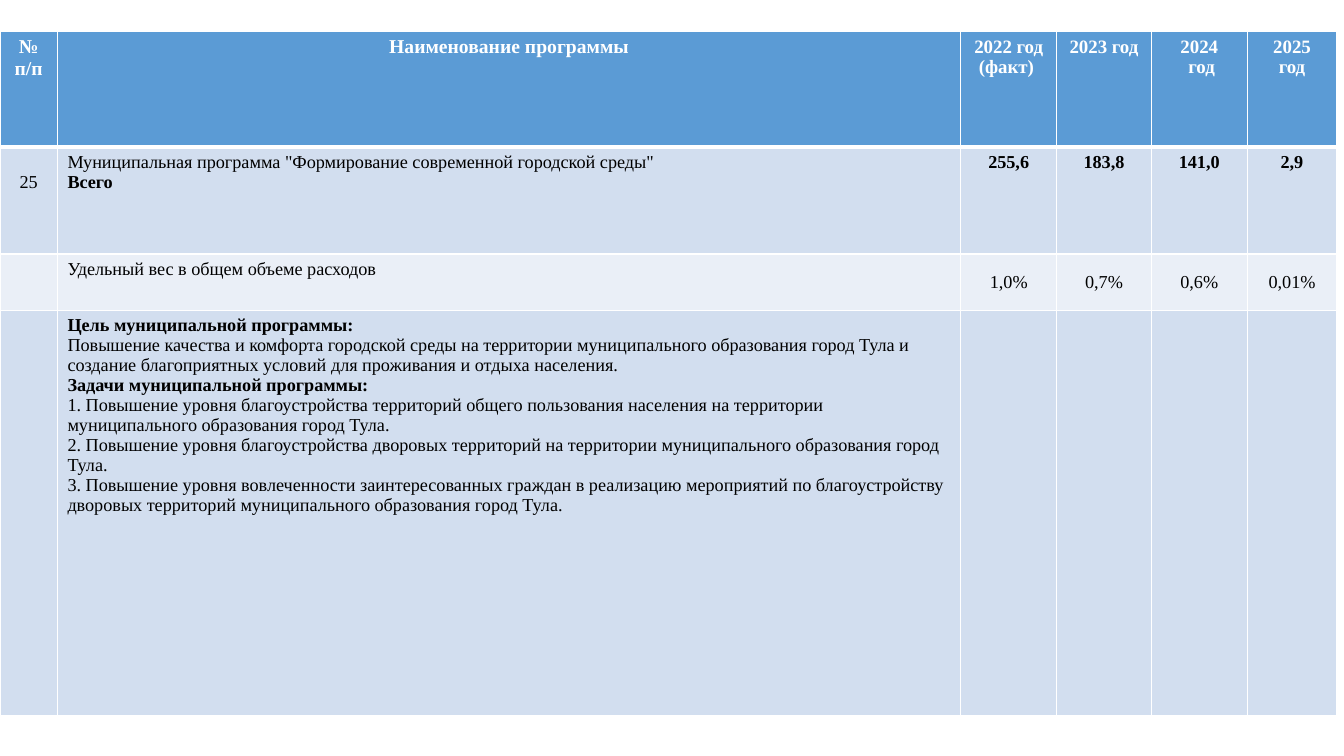
"""Build a slide with the budget table of a municipal programme."""
from lxml.etree import SubElement
from pptx import Presentation
from pptx.dml.color import RGBColor
from pptx.enum.text import MSO_ANCHOR as ANCHOR, PP_ALIGN as ALIGN
from pptx.oxml.ns import qn
from pptx.util import Inches, Pt

WHITE = RGBColor(0xFF, 0xFF, 0xFF)
BLACK = RGBColor(0, 0, 0)
BLUE = RGBColor(0x5B, 0x9B, 0xD5)
BAND_DARK = RGBColor(0xD2, 0xDE, 0xEF)
BAND_LIGHT = RGBColor(0xEA, 0xEF, 0xF7)

COL_WIDTHS = [0.57, 8.96, 0.95, 0.94, 0.95, 0.89]
ROW_HEIGHTS = [1.15, 1.06, 0.56, 4.02]
ROW_FILLS = [BLUE, BAND_DARK, BAND_LIGHT, BAND_DARK]

HEADERS = ["№ п/п", "Наименование программы", "2022 год (факт) ", "2023 год",
           "2024\n год", "2025\nгод"]
TOTALS = ["255,6", "183,8", "141,0", "2,9"]
SHARES = ["1,0%", "0,7%", "0,6%", "0,01%"]
PROGRAMME = """Муниципальная программа "Формирование современной городской среды"
Всего"""
GOALS = """Цель муниципальной программы:
Повышение качества и комфорта городской среды на территории муниципального образования город Тула и создание благоприятных условий для проживания и отдыха населения.
Задачи муниципальной программы:
1. Повышение уровня благоустройства территорий общего пользования населения на территории муниципального образования город Тула.
2. Повышение уровня благоустройства дворовых территорий на территории муниципального образования город Тула.
3. Повышение уровня вовлеченности заинтересованных граждан в реализацию мероприятий по благоустройству дворовых территорий муниципального образования город Тула."""


def write(cell, text, size=13, color=BLACK, align=ALIGN.CENTER,
          anchor=ANCHOR.TOP, bold_lines=()):
    """Write each line of text as a paragraph, with the listed lines in bold."""
    cell.vertical_anchor = anchor
    tf = cell.text_frame
    for i, line in enumerate(text.split("\n")):
        p = tf.add_paragraph() if i else tf.paragraphs[0]
        p.alignment = align
        r = p.add_run()
        r.text = line
        r.font.name = "Times New Roman"
        r.font.size = Pt(size)
        r.font.bold = i in bold_lines
        r.font.color.rgb = color


def add_borders(cell, **widths):
    """Draw white borders on the named sides, with widths in points."""
    tc_pr = cell._tc.get_or_add_tcPr()
    for side, width in widths.items():
        ln = SubElement(tc_pr, qn(f"a:ln{side}"), w=str(Pt(width)))
        fill = SubElement(ln, qn("a:solidFill"))
        SubElement(fill, qn("a:srgbClr"), val=str(WHITE))


def add_grid(s):
    """Add the empty table with its sizes, fills and borders."""
    shape = s.shapes.add_table(len(ROW_HEIGHTS), len(COL_WIDTHS), 0, Inches(0.31),
                               Inches(sum(COL_WIDTHS)), Inches(sum(ROW_HEIGHTS)))
    table = shape.table
    for column, width in zip(table.columns, COL_WIDTHS):
        column.width = Inches(width)
    for i, row in enumerate(table.rows):
        row.height = Inches(ROW_HEIGHTS[i])
        for cell in row.cells:
            if i == 0:
                add_borders(cell, L=1, R=1, T=1, B=3)
            else:
                add_borders(cell, L=1, R=1, B=1)
            cell.fill.solid()
            cell.fill.fore_color.rgb = ROW_FILLS[i]
    return table


def fill_table(table):
    """Write the headers, the figures and the programme's goals."""
    for col, header in enumerate(HEADERS):
        write(table.cell(0, col), header, size=14 if col < 2 else 13.5,
              color=WHITE, bold_lines=(0, 1))
    number = table.cell(1, 0)
    number.margin_top = Inches(0.25)
    write(number, "25")
    write(table.cell(1, 1), PROGRAMME, align=ALIGN.LEFT, bold_lines=(1,))
    write(table.cell(2, 1), "Удельный вес в общем объеме расходов", align=ALIGN.LEFT)
    write(table.cell(3, 1), GOALS, align=ALIGN.LEFT, bold_lines=(0, 2))
    for col, (total, share) in enumerate(zip(TOTALS, SHARES), start=2):
        write(table.cell(1, col), total, bold_lines=(0,))
        write(table.cell(2, col), share, anchor=ANCHOR.MIDDLE)


def main():
    """Build and save the slide."""
    prs = Presentation()
    prs.slide_width = Inches(13.33)
    prs.slide_height = Inches(7.5)
    s = prs.slides.add_slide(prs.slide_layouts[6])
    fill_table(add_grid(s))
    prs.save("out.pptx")


if __name__ == "__main__":
    main()
